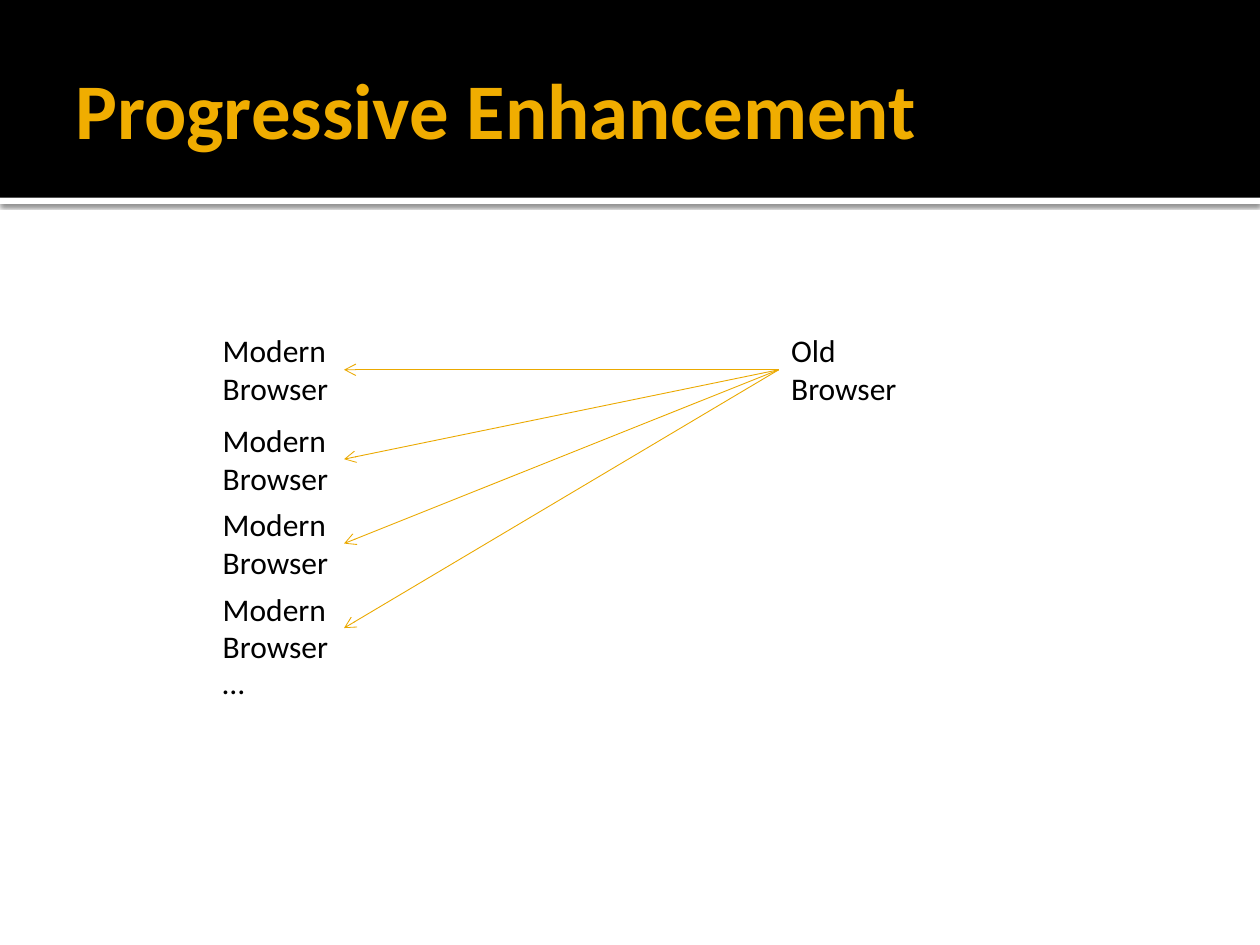
from lxml import etree
from pptx import Presentation
from pptx import util as u
from pptx.dml.color import RGBColor
from pptx.enum import shapes, text
from pptx.oxml.ns import qn

COLORS = {"title": "F0AD00", "arrow": "EBA900", "text": "000000",
          "band": "000000", "strip": "FFFFFF"}
FONT = "Calibri"
TITLE = "Progressive Enhancement"
OLD = ["Old", "Browser"]
MODERN = ["Modern", "Browser"]
MODERN_TOPS = [185.8, 236.9, 285.1, 333.4]
MORE = ["…"]
MORE_TOP = 375.1

SLIDE_W, SLIDE_H = 720, 540
BAND_H, STRIP_H = 113, 3.6
MODERN_X, OLD_X = 120.2, 445
LABEL_W, LABEL_H = 76.4, 51


def color(name):
    return RGBColor.from_string(COLORS[name])


def add_bar(s, top, height, name):
    sp = s.shapes.add_shape(shapes.MSO_SHAPE.RECTANGLE, 0, u.Pt(top),
                            u.Pt(SLIDE_W), u.Pt(height))
    sp.shadow.inherit = False
    sp.fill.solid()
    sp.fill.fore_color.rgb = color(name)
    sp.line.fill.background()
    return sp


def add_shadow(sp):
    effects = sp._element.spPr.find(qn("a:effectLst"))
    shadow = etree.SubElement(effects, qn("a:outerShdw"), blurRad=str(u.Pt(2.5)),
                              dist=str(u.Pt(0.8)), dir="5400000",
                              algn="tl", rotWithShape="0")
    clr = etree.SubElement(shadow, qn("a:srgbClr"), val="000000")
    etree.SubElement(clr, qn("a:alpha"), val="60000")


def add_text(s, lines, x, y, w, h, size=18, name="text", bold=False, wrap=True):
    tf = s.shapes.add_textbox(u.Pt(x), u.Pt(y), u.Pt(w), u.Pt(h)).text_frame
    tf.word_wrap = wrap
    tf.text = "\n".join(lines)
    for p in tf.paragraphs:
        p.font.name = FONT
        p.font.size = u.Pt(size)
        p.font.bold = bold
        p.font.color.rgb = color(name)
    return tf


def add_arrow(s, x1, y1, x2, y2):
    line = s.shapes.add_connector(shapes.MSO_CONNECTOR.STRAIGHT,
                                  u.Pt(x1), u.Pt(y1), u.Pt(x2), u.Pt(y2))
    line.line.color.rgb = color("arrow")
    line.line.width = u.Pt(0.5)
    etree.SubElement(line.line._get_or_add_ln(), qn("a:tailEnd"), type="arrow")
    etree.SubElement(line._element.spPr, qn("a:effectLst"))


def main():
    prs = Presentation()
    prs.slide_width, prs.slide_height = u.Pt(SLIDE_W), u.Pt(SLIDE_H)
    s = prs.slides.add_slide(prs.slide_layouts[6])

    add_shadow(add_bar(s, BAND_H, STRIP_H, "strip"))
    add_bar(s, 0, BAND_H, "band")
    title = add_text(s, [TITLE], 36, 12.2, 648, 98.6, 45, "title", bold=True)
    title.vertical_anchor = text.MSO_ANCHOR.MIDDLE
    title.margin_right = u.Pt(3.6)

    old_top = MODERN_TOPS[0]
    add_text(s, OLD, OLD_X, old_top, LABEL_W, LABEL_H)
    for top in MODERN_TOPS:
        add_text(s, MODERN, MODERN_X, top, LABEL_W, LABEL_H, wrap=False)
        add_arrow(s, OLD_X, old_top + LABEL_H / 2,
                  MODERN_X + LABEL_W, top + LABEL_H / 2)
    add_text(s, MORE, MODERN_X, MORE_TOP, LABEL_W, LABEL_H)

    prs.save("out.pptx")


if __name__ == "__main__":
    main()
